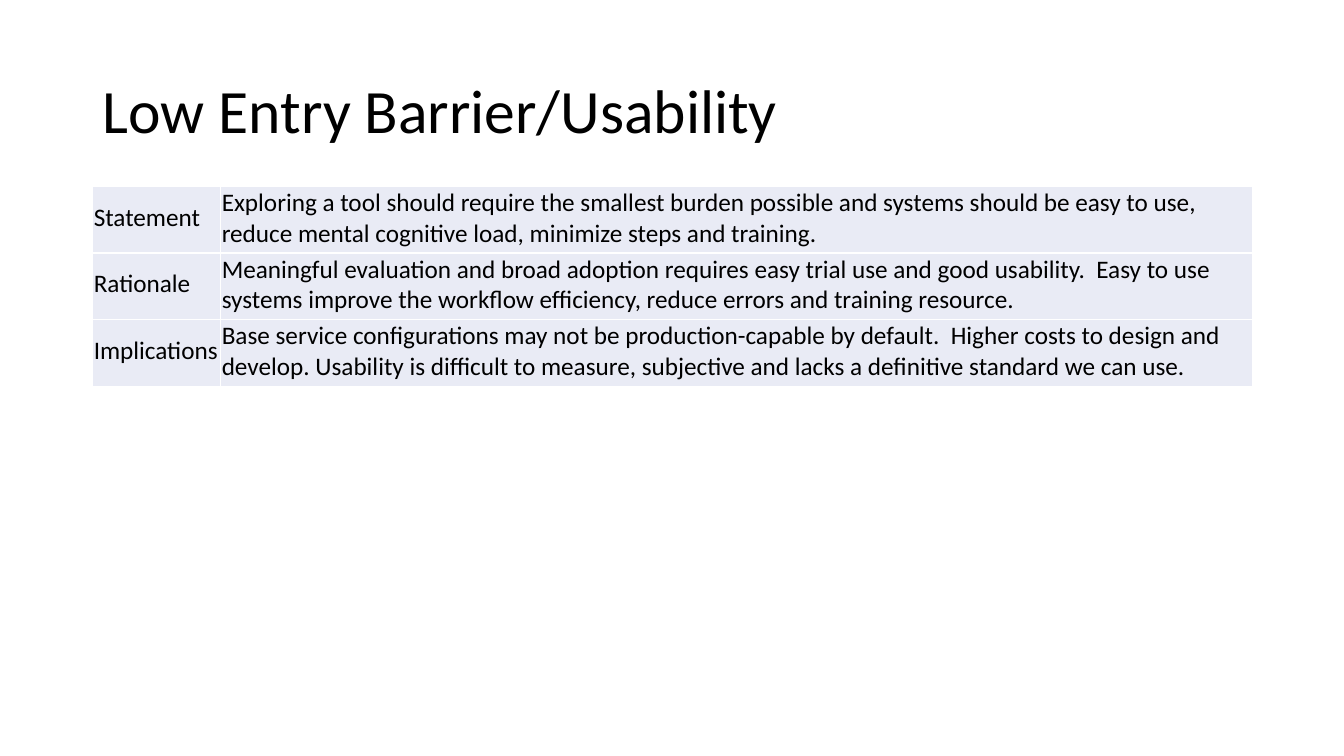
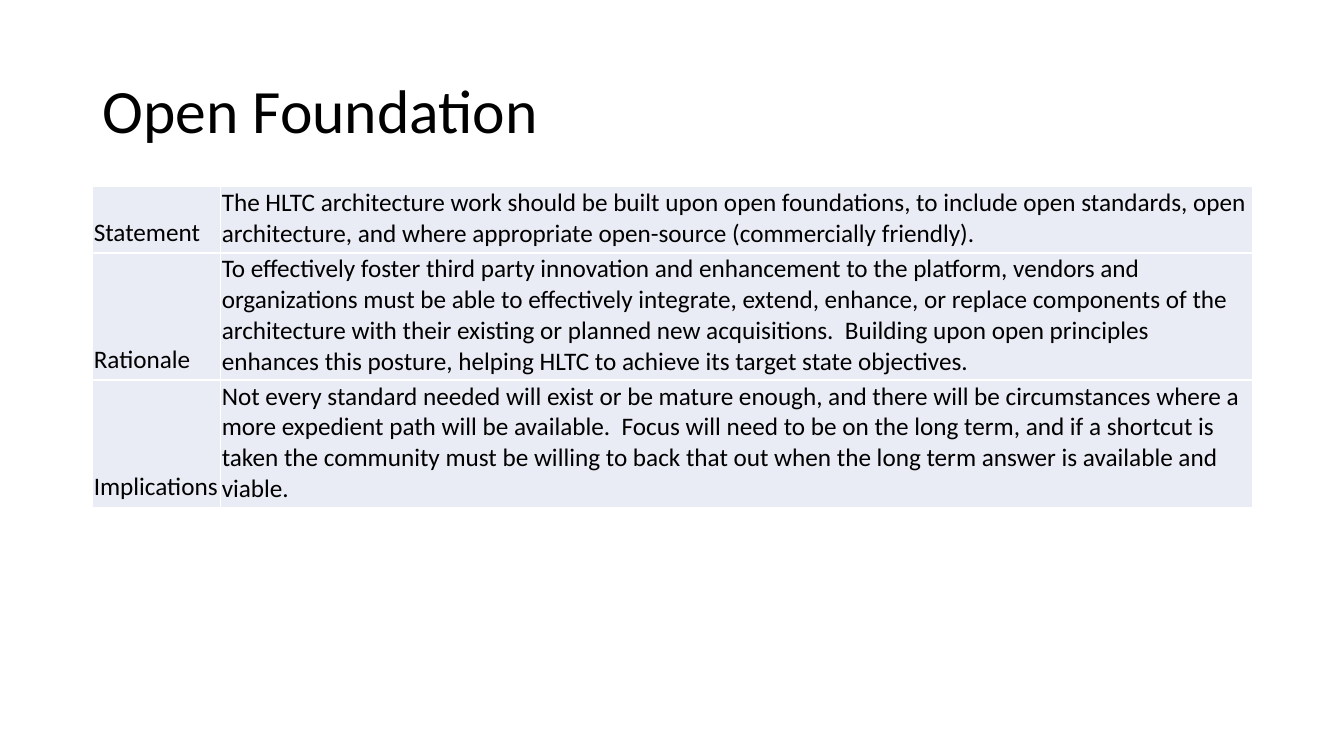
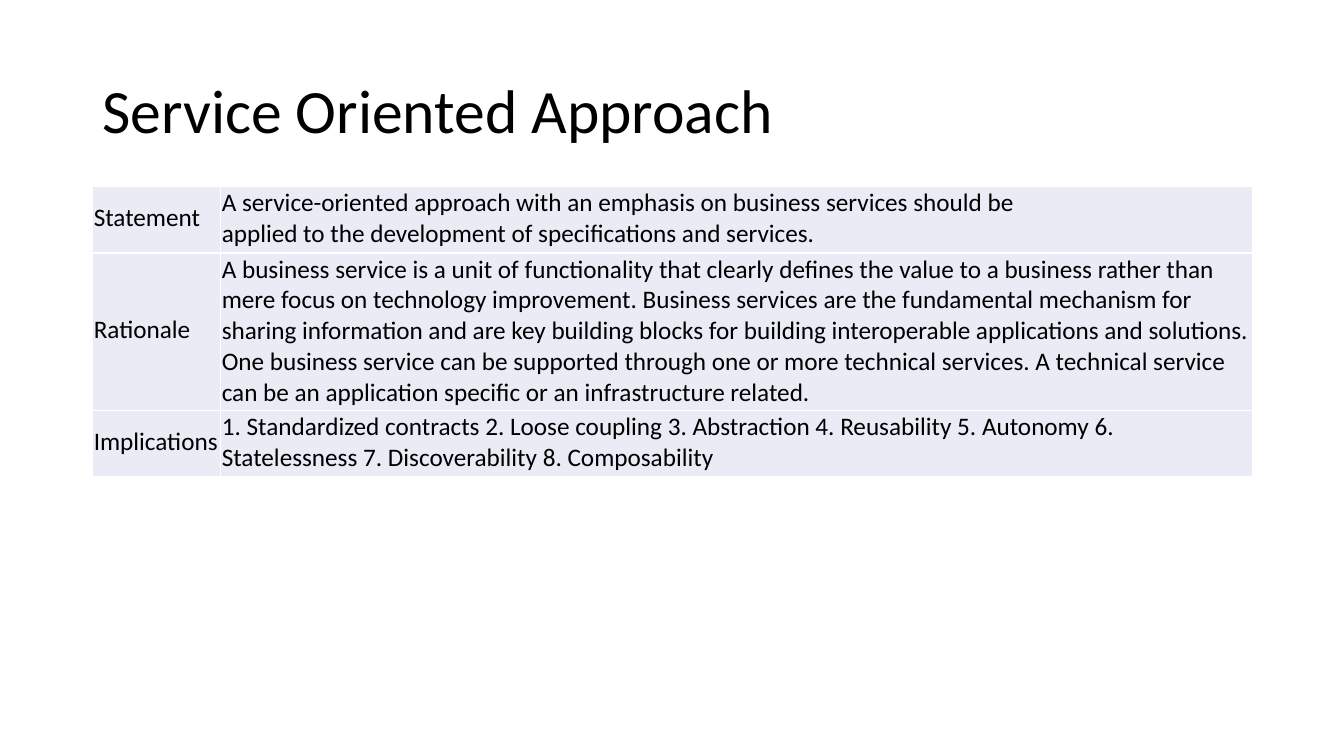
from pptx import Presentation
from pptx.dml.color import RGBColor
from pptx.enum.text import MSO_ANCHOR
from pptx.util import Inches, Pt

# Shared look
BLACK = RGBColor(0x00, 0x00, 0x00)
PALE = RGBColor(0xE9, 0xEB, 0xF5)
FONT = "Calibri"
LEFT, WIDTH, TOP = 0.92, 11.5, 1.85
LABEL_W = 1.27
LINE_H, PAD_H = 0.3, 0.06
LABELS = ("Statement", "Rationale", "Implications")
MIDDLE, BOTTOM = MSO_ANCHOR.MIDDLE, MSO_ANCHOR.BOTTOM

# Content: title, cell anchor, (number of lines, text) for each label
SLIDES = [
    ("Low Entry Barrier/Usability", MIDDLE, [
        (2, "Exploring a tool should require the smallest burden possible and "
            "systems should be easy to use, reduce mental cognitive load, "
            "minimize steps and training."),
        (2, "Meaningful evaluation and broad adoption requires easy trial use "
            "and good usability.  Easy to use systems improve the "
            "workflow efficiency, reduce errors and training resource."),
        (2, "Base service configurations may not be production-capable by "
            "default.  Higher costs to design and develop. Usability is "
            "difficult to measure, subjective and lacks a "
            "definitive standard we can use."),
    ]),
    ("Open Foundation", BOTTOM, [
        (2, "The HLTC architecture work should be built upon open foundations, "
            "to include open standards, open architecture, and where "
            "appropriate open-source (commercially friendly)."),
        (4, "To effectively foster third party innovation and enhancement to "
            "the platform, vendors and organizations must be able to "
            "effectively integrate, extend, enhance, or replace components of "
            "the architecture with their existing or planned new "
            "acquisitions.  Building upon open principles enhances this "
            "posture, helping HLTC to achieve its target state objectives."),
        (4, "Not every standard needed will exist or be mature enough, and "
            "there will be circumstances where a more expedient path will be "
            "available.  Focus will need to be on the long term, and if a "
            "shortcut is taken the community must be willing to back that out "
            "when the long term answer is available and viable."),
    ]),
    ("Service Oriented Approach", MIDDLE, [
        (2, "A service-oriented approach with an emphasis on business services "
            "should be\napplied to the development of specifications and "
            "services."),
        (5, "A business service is a unit of functionality that clearly "
            "defines the value to a business rather than mere focus on "
            "technology improvement. Business services are the fundamental "
            "mechanism for sharing information and are key building blocks for "
            "building interoperable applications and solutions. One business "
            "service can be supported through one or more technical services. "
            "A technical service can be an application specific or an "
            "infrastructure related."),
        (2, "1. Standardized contracts 2. Loose coupling 3. Abstraction "
            "4. Reusability 5. Autonomy 6. Statelessness 7. Discoverability "
            "8. Composability"),
    ]),
]


def write(frame, text, size=18, color=BLACK, spacing=None):
    para = frame.paragraphs[0]
    para.text = text
    para.line_spacing = spacing
    for run in para.runs:
        run.font.name = FONT
        run.font.size = Pt(size)
        run.font.color.rgb = color


def add_title(slide, title):
    box = slide.shapes.add_textbox(
        Inches(LEFT), Inches(0.4), Inches(WIDTH), Inches(1.45))
    frame = box.text_frame
    frame.word_wrap = True
    frame.vertical_anchor = MIDDLE
    write(frame, title, size=44, spacing=0.9)


def fill_cell(cell, text, anchor):
    cell.margin_left = cell.margin_right = cell.margin_top = Inches(0.01)
    cell.margin_bottom = Inches(0.05)
    cell.vertical_anchor = anchor
    cell.fill.solid()
    cell.fill.fore_color.rgb = PALE
    write(cell.text_frame, text)


def add_grid(slide, rows, anchor):
    heights = [PAD_H + LINE_H * lines for lines, _ in rows]
    table = slide.shapes.add_table(
        len(rows), 2, Inches(LEFT), Inches(TOP),
        Inches(WIDTH), Inches(sum(heights))).table
    # The table style supplies the thin white rules
    table.first_row = table.horz_banding = False
    table.columns[0].width = Inches(LABEL_W)
    table.columns[1].width = Inches(WIDTH - LABEL_W)
    for i, (label, (_, text)) in enumerate(zip(LABELS, rows)):
        table.rows[i].height = Inches(heights[i])
        fill_cell(table.cell(i, 0), label, anchor)
        fill_cell(table.cell(i, 1), text, anchor)


def main():
    deck = Presentation()
    deck.slide_width, deck.slide_height = Inches(13.33), Inches(7.5)
    for title, anchor, rows in SLIDES:
        slide = deck.slides.add_slide(deck.slide_layouts[6])
        add_title(slide, title)
        add_grid(slide, rows, anchor)
    deck.save("out.pptx")


if __name__ == "__main__":
    main()
